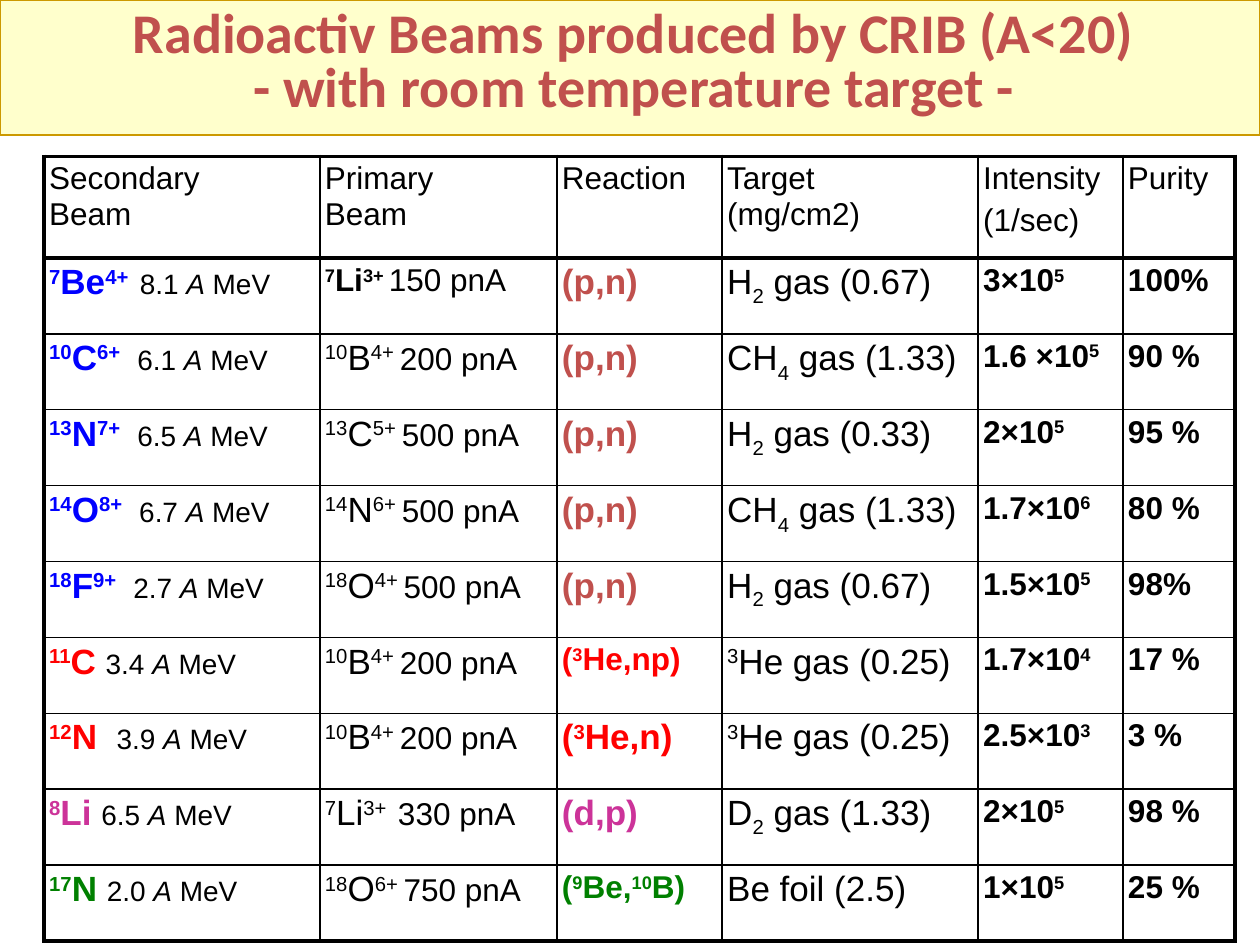
from lxml import etree
from pptx import Presentation
from pptx import util as u
from pptx.dml.color import RGBColor
from pptx.enum import shapes, text
from pptx.oxml import ns

COLORS = {
    "black": "000000", "banner": "FFFFCC", "gold": "CC9900", "brick": "C0504D",
    "blue": "0000FF", "red": "FF0000", "magenta": "CC3399", "green": "008000",
}
THIN, THICK = 1, 2.25
# A piece of marked-up text starts with one of these to shift its baseline.
BASELINES = {"^": 30, "_": -25, "~": -30}
ITALIC = "/"

COLUMN_WIDTHS = [5.56, 4.78, 3.33, 5.16, 2.92, 2.26]
HEADER_HEIGHT, ROW_HEIGHT = 2.05, 1.53
HEADERS = [["Secondary", "Beam"], ["Primary", "Beam"], ["Reaction"],
           ["Target", "(mg/cm2)"], ["Intensity", "(1/sec)"], ["Purity"]]

# colour of the isotope, isotope, energy, primary ion, primary current,
# reaction, its colour and size, target, intensity, purity
BEAMS = [
    ("blue", "^7|Be|^4+  ", "8.1", "^7|Li|^3+ ", "150 pnA",
     "(p,n)", "brick", 20, "H|_2| gas (0.67)", "3×10|^5", "100%"),
    ("blue", "^10|C|^6+   ", "6.1", "^10|B|^4+ ", "200 pnA",
     "(p,n)", "brick", 20, "CH|~4| gas (1.33)", "1.6 ×10|^5", "90 %"),
    ("blue", "^13|N|^7+   ", "6.5", "^13|C|^5+ ", "500 pnA",
     "(p,n)", "brick", 20, "H|_2| gas (0.33)", "2×10|^5", "95 %"),
    ("blue", "^14|O|^8+   ", "6.7", "^14|N|^6+ ", "500 pnA",
     "(p,n)", "brick", 20, "CH|~4| gas (1.33)", "1.7×10|^6", "80 %"),
    ("blue", "^18|F|^9+   ", "2.7", "^18|O|^4+ ", "500 pnA",
     "(p,n)", "brick", 20, "H|_2| gas (0.67)", "1.5×10|^5", "98%"),
    ("red", "^11|C ", "3.4", "^10|B|^4+ ", "200 pnA",
     "(|^3|He,np)", "red", 18, "^3|He gas (0.25)", "1.7×10|^4", "17 %"),
    ("red", "^12|N  ", "3.9", "^10|B|^4+ ", "200 pnA",
     "(|^3|He,n)", "red", 20, "^3|He gas (0.25)", "2.5×10|^3", "3 %"),
    ("magenta", "^8|Li ", "6.5", "^7|Li|^3+  ", "330 pnA",
     "(d,p)", "magenta", 20, "D|_2| gas (1.33)", "2×10|^5", "98 %"),
    ("green", "^17|N ", "2.0", "^18|O|^6+ ", "750 pnA",
     "(|^9|Be,|^10|B)", "green", 18, "Be foil (2.5)", "1×10|^5", "25 %"),
]


def rgb(name):
    return RGBColor.from_string(COLORS[name])


def set_font(font, color="black", **values):
    for attribute, value in values.items():
        setattr(font, attribute, value)
    font.color.rgb = rgb(color)


def write(paragraph, markup, size=18, color="black", bold=False):
    """Add one run for each piece of the markup, pieces being split by bars."""
    for piece in markup.split("|"):
        mark = piece[0]
        run = paragraph.add_run()
        run.text = piece[1:] if mark in BASELINES or mark == ITALIC else piece
        set_font(run.font, color, name="Arial", size=u.Pt(size), bold=bold,
                 italic=mark == ITALIC)
        if mark in BASELINES:
            run.font._element.set("baseline", str(BASELINES[mark] * 1000))


def set_borders(cell, widths):
    properties = cell._tc.get_or_add_tcPr()
    for side, width in widths.items():
        line = etree.SubElement(properties, ns.qn(f"a:ln{side}"), w=str(u.Pt(width)))
        fill = etree.SubElement(line, ns.qn("a:solidFill"))
        etree.SubElement(fill, ns.qn("a:srgbClr"), val=COLORS["black"])


def format_cells(table):
    last_row, last_column = len(table.rows) - 1, len(table.columns) - 1
    margins = dict.fromkeys(
        ["margin_left", "margin_right", "margin_top", "margin_bottom"], u.Cm(0.1))
    for r in range(last_row + 1):
        for c in range(last_column + 1):
            cell = table.cell(r, c)
            for attribute, value in margins.items():
                setattr(cell, attribute, value)
            set_borders(cell, {
                "L": THICK if c == 0 else THIN,
                "R": THICK if c == last_column else THIN,
                "T": THICK if r <= 1 else THIN,
                "B": THICK if r in (0, last_row) else THIN,
            })
            cell.fill.background()


def fill_header(table):
    for c, lines in enumerate(HEADERS):
        frame = table.cell(0, c).text_frame
        for i, line in enumerate(lines):
            paragraph = frame.add_paragraph() if i else frame.paragraphs[0]
            write(paragraph, line)
            if i and lines[0] == "Intensity":
                paragraph.space_before = u.Pt(3.6)


def fill_beam(table, r, beam):
    (isotope_color, isotope, energy, ion, current,
     reaction, reaction_color, reaction_size, target, intensity, purity) = beam
    secondary, primary, process, material, rate, share = (
        table.cell(r, c).text_frame.paragraphs[0] for c in range(len(HEADERS)))
    first = r == 1
    secondary.alignment = text.PP_ALIGN.JUSTIFY
    write(secondary, isotope, 20, isotope_color, bold=True)
    write(secondary, f"{energy} |/A| MeV", 16)
    write(primary, ion, 18 if first else 20, bold=first)
    write(primary, current)
    write(process, reaction, reaction_size, reaction_color, bold=True)
    write(material, target, 20)
    write(rate, intensity, bold=True)
    write(share, purity, bold=True)


def add_beam_table(slide, left, top):
    heights = [HEADER_HEIGHT] + [ROW_HEIGHT] * len(BEAMS)
    table = slide.shapes.add_table(
        len(heights), len(COLUMN_WIDTHS), u.Cm(left), u.Cm(top),
        u.Cm(sum(COLUMN_WIDTHS)), u.Cm(sum(heights))).table
    table.first_row = table.horz_banding = False
    for column, width in zip(table.columns, COLUMN_WIDTHS):
        column.width = u.Cm(width)
    for row, height in zip(table.rows, heights):
        row.height = u.Cm(height)
    format_cells(table)
    fill_header(table)
    for r, beam in enumerate(BEAMS, start=1):
        fill_beam(table, r, beam)


def add_banner(slide, left, top, width, height):
    """Place the title on a filled band."""
    band = slide.shapes.add_shape(shapes.MSO_SHAPE.RECTANGLE, u.Cm(left), u.Cm(top),
                                  u.Cm(width), u.Cm(height))
    band.shadow.inherit = False
    band.fill.solid()
    band.fill.fore_color.rgb = rgb("banner")
    band.line.color.rgb = rgb("gold")
    band.line.width = u.Pt(1.5)

    title = slide.shapes.title
    title._element.addprevious(band._element)
    box = {"left": left + 1.65, "top": top + 0.1,
           "width": width - 3.15, "height": height - 0.31}
    for attribute, value in box.items():
        setattr(title, attribute, u.Cm(value))
    frame = title.text_frame
    frame.text = "Radioactiv Beams produced by CRIB (A<20)\v- with room temperature target -"
    frame.word_wrap = False
    frame.auto_size = text.MSO_AUTO_SIZE.SHAPE_TO_FIT_TEXT
    frame.vertical_anchor = text.MSO_ANCHOR.MIDDLE
    paragraph = frame.paragraphs[0]
    paragraph.alignment = text.PP_ALIGN.CENTER
    paragraph.line_spacing = 0.8
    for run in paragraph.runs:
        set_font(run.font, "brick", name="Calibri", size=u.Pt(32), bold=True)


def main():
    deck = Presentation()
    deck.slide_width, deck.slide_height = u.Cm(25.4), u.Cm(19.05)
    slide = deck.slides.add_slide(deck.slide_layouts.get_by_name("Title Only"))
    add_banner(slide, 0, 0, 25.4, 2.72)
    add_beam_table(slide, 0.89, 3.15)
    deck.save("out.pptx")


if __name__ == "__main__":
    main()
